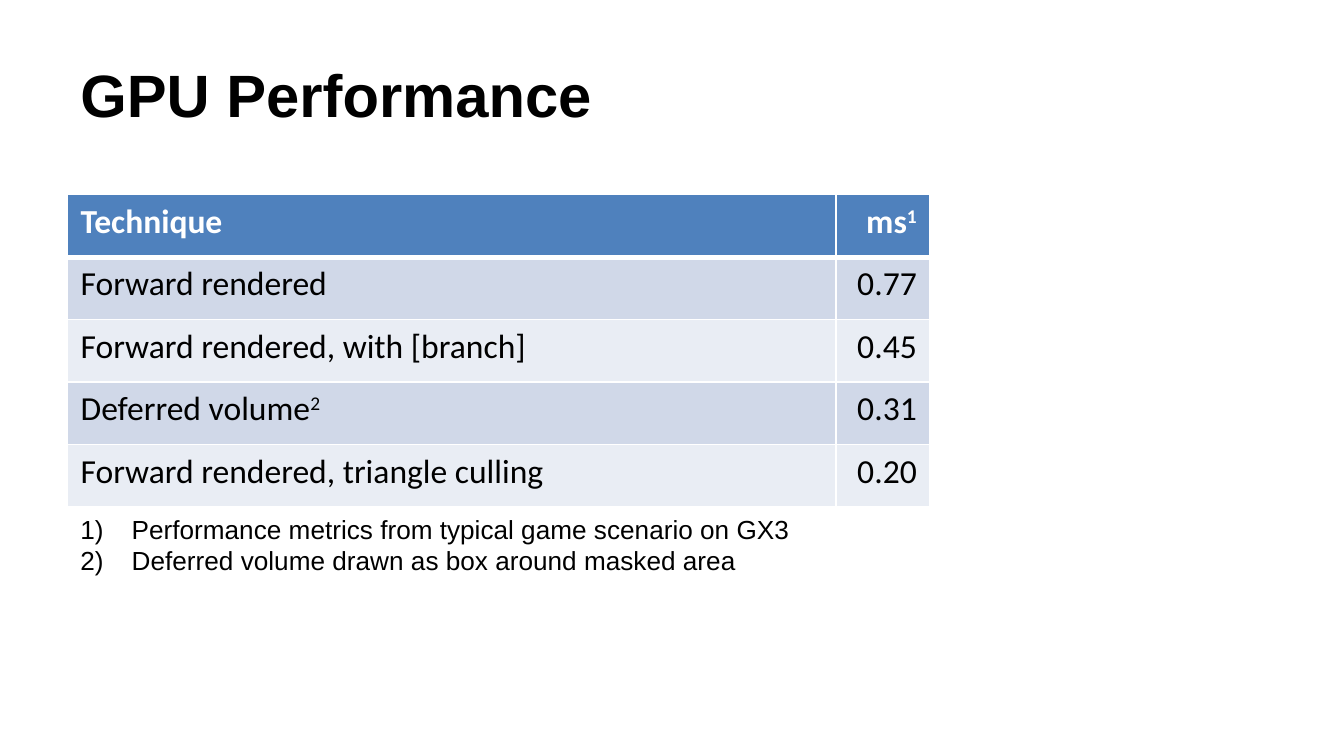
from dataclasses import dataclass

from lxml.etree import SubElement
from pptx import Presentation
from pptx.dml.color import RGBColor as Color
from pptx.enum.text import MSO_ANCHOR as Anchor, PP_ALIGN as Align
from pptx.oxml.ns import qn
from pptx.util import Cm, Pt

COLORS = {
    "text": "000000",
    "white": "FFFFFF",
    "header": "4F81BD",
    "band_dark": "D0D8E8",
    "band_light": "E9EDF4",
}
LEFT = Cm(1.27)
COLUMN_WIDTHS = (Cm(14.53), Cm(1.78))
ROW_HEIGHT = Cm(1.18)
NOTE_INDENT = Cm(0.97)


@dataclass
class Row:
    technique: str
    time: str
    technique_mark: str = ""
    time_mark: str = ""


ROWS = [
    Row("Technique", "ms", time_mark="1"),
    Row("Forward rendered", "0.77"),
    Row("Forward rendered, with [branch]", "0.45"),
    Row("Deferred volume", "0.31", technique_mark="2"),
    Row("Forward rendered, triangle culling", "0.20"),
]
NOTES = [
    "Performance metrics from typical game scenario on GX3",
    "Deferred volume drawn as box around masked area",
]


def write(para, text: str, *, size: int, font="Arial", color="text",
          bold=False, superscript=False) -> None:
    """Append one formatted span to a paragraph."""
    span = para.add_run()
    span.text = text
    span.font.name = font
    span.font.size = Pt(size)
    span.font.bold = bold
    span.font.color.rgb = Color.from_string(COLORS[color])
    if superscript:
        span._r.get_or_add_rPr().set("baseline", "30000")


def set_border(cell, side: str, width: int) -> None:
    line = SubElement(cell._tc.get_or_add_tcPr(), qn(f"a:ln{side}"), w=str(Pt(width)))
    fill = SubElement(line, qn("a:solidFill"))
    SubElement(fill, qn("a:srgbClr"), val=COLORS["white"])


def fill_cell(cell, row_index: int, text: str, mark: str, align: Align) -> None:
    is_header = row_index == 0
    widths = {"L": 1, "R": 1, "T": 3 if row_index == 1 else 1, "B": 3 if is_header else 1}
    for side, width in widths.items():
        set_border(cell, side, width)
    band = "band_dark" if row_index % 2 else "band_light"
    cell.fill.solid()
    cell.fill.fore_color.rgb = Color.from_string(COLORS["header" if is_header else band])

    para = cell.text_frame.paragraphs[0]
    para.alignment = align
    style = dict(size=18, font="Calibri", color="white" if is_header else "text",
                 bold=is_header)
    write(para, text, **style)
    if mark:
        write(para, mark, superscript=True, **style)


def number_paragraph(para) -> None:
    properties = para._p.get_or_add_pPr()
    properties.set("marL", str(NOTE_INDENT))
    properties.set("indent", str(-NOTE_INDENT))
    SubElement(properties, qn("a:buFont"), typeface="+mj-lt")
    SubElement(properties, qn("a:buAutoNum"), type="arabicParenR")


def add_title(page) -> None:
    box = page.shapes.add_textbox(LEFT, Cm(0.58), Cm(22.86), Cm(2.39))
    frame = box.text_frame
    frame.word_wrap = True
    frame.vertical_anchor = Anchor.MIDDLE
    write(frame.paragraphs[0], "GPU Performance", size=32, bold=True)


def add_timings(page) -> None:
    table = page.shapes.add_table(len(ROWS), len(COLUMN_WIDTHS), LEFT, Cm(3.68),
                                  sum(COLUMN_WIDTHS), ROW_HEIGHT * len(ROWS)).table
    for column, width in zip(table.columns, COLUMN_WIDTHS):
        column.width = width
    for index, row in enumerate(ROWS):
        table.rows[index].height = ROW_HEIGHT
        fill_cell(table.cell(index, 0), index, row.technique, row.technique_mark, Align.LEFT)
        fill_cell(table.cell(index, 1), index, row.time, row.time_mark, Align.RIGHT)


def add_notes(page) -> None:
    box = page.shapes.add_textbox(LEFT, Cm(9.58), Cm(13.92), Cm(1.45))
    frame = box.text_frame
    frame.word_wrap = False
    for index, note in enumerate(NOTES):
        para = frame.add_paragraph() if index else frame.paragraphs[0]
        number_paragraph(para)
        write(para, note, size=14)


def main() -> None:
    deck = Presentation()
    deck.slide_width, deck.slide_height = Cm(25.4), Cm(14.29)
    page = deck.slides.add_slide(deck.slide_layouts[6])
    # Heading, timing table and numbered footnotes
    add_title(page)
    add_timings(page)
    add_notes(page)
    deck.save("out.pptx")


if __name__ == "__main__":
    main()
